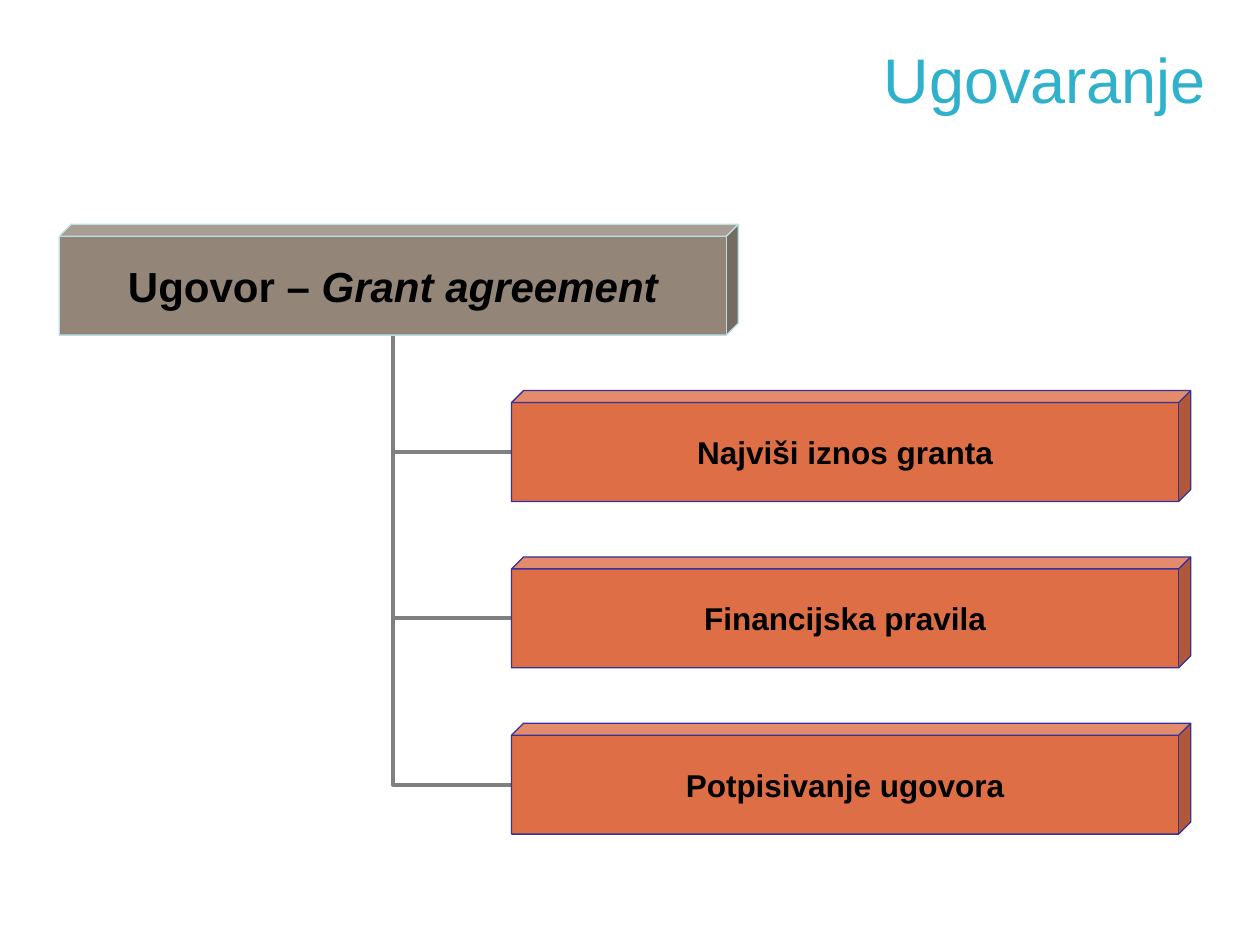
from dataclasses import dataclass

from lxml import etree
from pptx import Presentation
from pptx.dml.color import RGBColor
from pptx.enum.shapes import MSO_CONNECTOR, MSO_SHAPE
from pptx.enum.text import MSO_ANCHOR, PP_ALIGN
from pptx.oxml.ns import qn
from pptx.util import Inches, Pt

CUBE = MSO_SHAPE.CUBE
ELBOW = MSO_CONNECTOR.ELBOW
MIDDLE = MSO_ANCHOR.MIDDLE
CENTER, RIGHT = PP_ALIGN.CENTER, PP_ALIGN.RIGHT

BOX_WIDTH, BOX_HEIGHT = 5.39, 0.88
CUBE_DEPTH = 0.108
DEPTH = CUBE_DEPTH * BOX_HEIGHT
ROOT_LEFT, CHILD_LEFT = 0.47, 4.06
FIRST_TOP, ROW_STEP = 1.78, 1.32
CUBE_LEFT_SITE, CUBE_BOTTOM_SITE = 2, 3

CHILD_LABELS = ["Najviši iznos granta", "Financijska pravila", "Potpisivanje ugovora"]


@dataclass(frozen=True)
class Theme:
    font: str = "Arial"
    title: str = "2FB1CC"
    text: str = "000000"
    root_fill: str = "938678"
    root_line: str = "BBE0E3"
    child_fill: str = "DE6E46"
    child_line: str = "333399"
    connector: str = "808080"
    title_size: int = 36
    root_size: int = 24
    child_size: int = 18
    box_line_width: float = 0.75
    connector_width: float = 2.25


def color(value):
    return RGBColor.from_string(value)


class ChartSlide:
    def __init__(self, slide, theme):
        self.slide = slide
        self.theme = theme

    def set_text(self, frame, parts, size, text_color, alignment, bold=False):
        """Fill the frame with one paragraph of (text, italic) parts."""
        frame.vertical_anchor = MIDDLE
        paragraph = frame.paragraphs[0]
        paragraph.alignment = alignment
        for text, italic in parts:
            run = paragraph.add_run()
            run.text = text
            run.font.name = self.theme.font
            run.font.size = Pt(size)
            run.font.bold = bold
            run.font.italic = italic
            run.font.color.rgb = color(text_color)

    def add_title(self, text):
        box = self.slide.shapes.add_textbox(Inches(1.17), 0, Inches(8.5), Inches(1.25))
        box.text_frame.word_wrap = True
        self.set_text(box.text_frame, [(text, False)], self.theme.title_size,
                      self.theme.title, RIGHT)

    def add_box(self, left, top, parts, size, fill, line):
        shape = self.slide.shapes.add_shape(
            CUBE, Inches(left), Inches(top), Inches(BOX_WIDTH), Inches(BOX_HEIGHT))
        shape.adjustments[0] = CUBE_DEPTH
        shape.shadow.inherit = False
        shape.fill.solid()
        shape.fill.fore_color.rgb = color(fill)
        shape.line.color.rgb = color(line)
        shape.line.width = Pt(self.theme.box_line_width)
        frame = shape.text_frame
        frame.margin_left = frame.margin_right = 0
        frame.margin_top = frame.margin_bottom = 0
        frame.word_wrap = False
        self.set_text(frame, parts, size, self.theme.text, CENTER, bold=True)
        return shape

    def add_branch(self, child, root):
        """Join a child's left side to the root's bottom, behind the boxes."""
        connector = self.slide.shapes.add_connector(ELBOW, 0, 0, 0, 0)
        connector.begin_connect(child, CUBE_LEFT_SITE)
        connector.end_connect(root, CUBE_BOTTOM_SITE)
        # The sites of a cube lie on its front face, so the ends are placed here.
        connector.begin_x = child.left
        connector.begin_y = child.top + Inches((BOX_HEIGHT + DEPTH) / 2)
        connector.end_x = root.left + Inches((BOX_WIDTH - DEPTH) / 2)
        connector.end_y = root.top + root.height
        connector.line.color.rgb = color(self.theme.connector)
        connector.line.width = Pt(self.theme.connector_width)
        properties = connector._element.spPr
        properties.find(qn("a:prstGeom")).set("prst", "bentConnector2")
        etree.SubElement(properties, qn("a:effectLst"))
        root._element.addprevious(connector._element)


def main():
    presentation = Presentation()
    presentation.slide_width = Inches(10)
    presentation.slide_height = Inches(7.5)
    theme = Theme()
    chart = ChartSlide(
        presentation.slides.add_slide(presentation.slide_layouts[6]), theme)

    chart.add_title("Ugovaranje")
    root = chart.add_box(
        ROOT_LEFT, FIRST_TOP, [("Ugovor – ", False), ("Grant agreement", True)],
        theme.root_size, theme.root_fill, theme.root_line)
    children = [
        chart.add_box(CHILD_LEFT, FIRST_TOP + row * ROW_STEP, [(label, False)],
                      theme.child_size, theme.child_fill, theme.child_line)
        for row, label in enumerate(CHILD_LABELS, start=1)
    ]
    for child in reversed(children):
        chart.add_branch(child, root)

    presentation.save("out.pptx")


if __name__ == "__main__":
    main()
